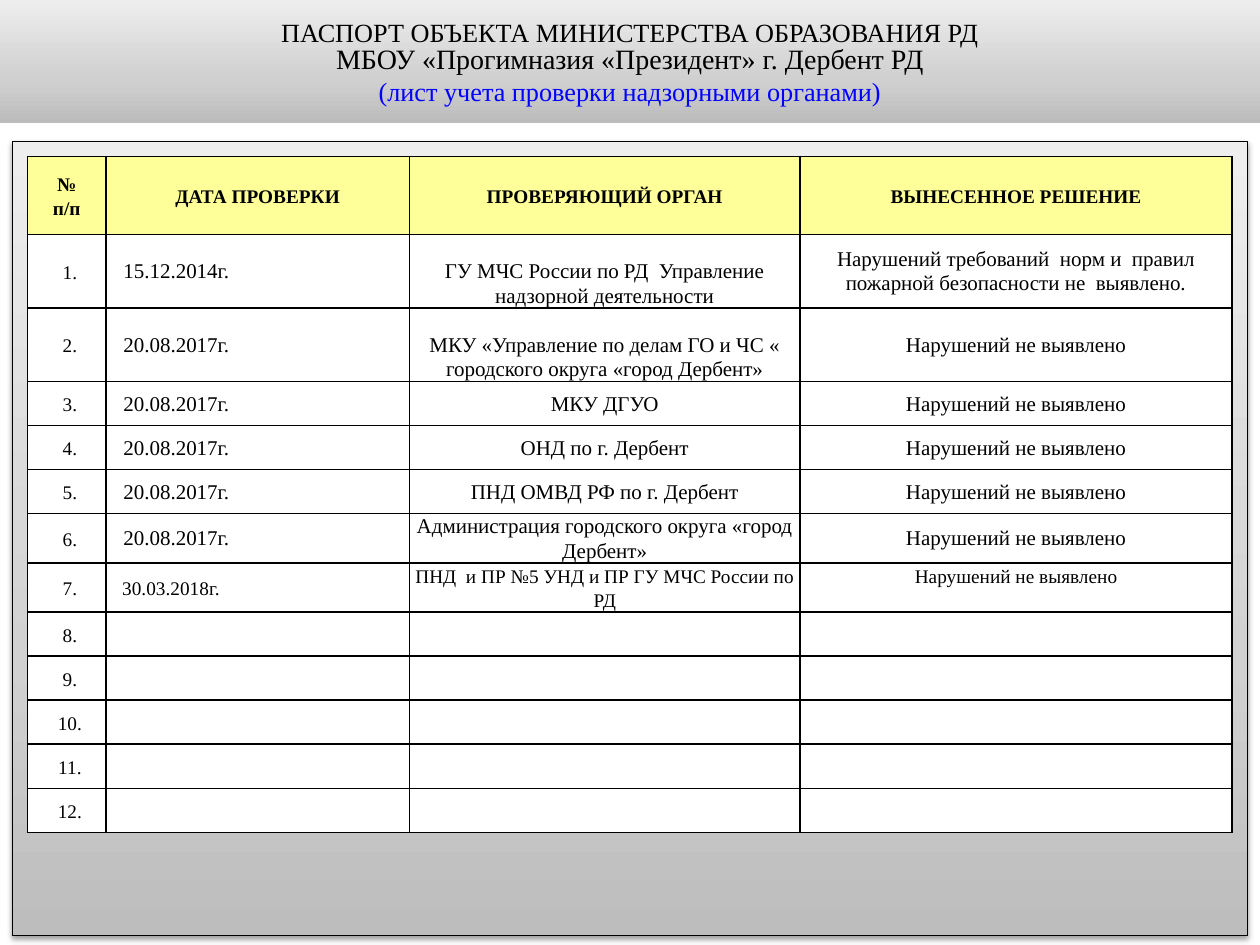
"""Build the inspection record slide: a shaded title band above a framed table."""
from copy import deepcopy
from dataclasses import dataclass

from lxml import etree
from pptx import Presentation
from pptx.dml.color import RGBColor
from pptx.enum.shapes import MSO_SHAPE
from pptx.enum.text import MSO_ANCHOR, MSO_AUTO_SIZE, PP_ALIGN
from pptx.oxml.ns import qn
from pptx.util import Inches, Pt

CENTER, LEFT = PP_ALIGN.CENTER, PP_ALIGN.LEFT
MIDDLE, TOP = MSO_ANCHOR.MIDDLE, MSO_ANCHOR.TOP
RECTANGLE = MSO_SHAPE.RECTANGLE
NO_AUTOFIT = MSO_AUTO_SIZE.NONE

WIDTH, HEIGHT = Inches(10), Inches(7.5)
FONT = "Times New Roman"
COLORS = {"text": "000000", "note": "0000FF", "header": "FFFF99", "cell": "FFFFFF", "line": "000000"}
TITLE_SHADES = ((0, "BCBCBC"), (0.35, "D0D0D0"), (1, "EDEDED"))
PANEL_SHADES = ((0, "BDBDBD"), (0.35, "D1D1D1"), (1, "EEEEEE"))
COLUMNS = (0.62, 2.41, 3.1, 3.43)
HEADER_HEIGHT, ROW_HEIGHT = 0.62, 0.35
ROW_COUNT = 12
LINE = Pt(14)
CLEAN = "Нарушений не выявлено"


@dataclass(frozen=True)
class Style:
    """How the text of a cell or a title line is set."""

    size: float = 12
    spacing: float = LINE
    align: PP_ALIGN = CENTER
    anchor: MSO_ANCHOR = MIDDLE
    indent: float = 0
    inset: float = 0.04
    top: int = 0
    bold: bool = False
    color: str = "text"


@dataclass(frozen=True)
class Inspection:
    """One filled row of the record."""

    date: str
    body: str
    decision: str = CLEAN
    height: float = ROW_HEIGHT
    top: int = 0
    size: float = 12
    inset: float = 0.04
    decision_spacing: float = LINE
    decision_anchor: MSO_ANCHOR = MIDDLE


TITLE_LINES = (
    ("ПАСПОРТ ОБЪЕКТА МИНИСТЕРСТВА ОБРАЗОВАНИЯ РД", Style(15, 1.0)),
    ("МБОУ «Прогимназия «Президент» г. Дербент РД", Style(16, 0.8)),
    ("(лист учета проверки надзорными органами)", Style(15, 1.0, color="note")),
)
HEADERS = (("№", "п/п"), ("ДАТА ПРОВЕРКИ",), ("ПРОВЕРЯЮЩИЙ ОРГАН",), ("ВЫНЕСЕННОЕ РЕШЕНИЕ",))
HEADER_STYLE = Style(11, 1.15, inset=0.03, bold=True)
NUMBER_STYLE = Style(11, 1.15, indent=0.05, inset=0.03)
INSPECTIONS = (
    Inspection("15.12.2014г.", "ГУ МЧС России по РД  Управление надзорной деятельности",
               "Нарушений требований  норм и  правил пожарной безопасности не  выявлено.",
               height=0.58, top=LINE),
    Inspection("20.08.2017г.", "МКУ «Управление по делам ГО и ЧС « городского округа «город Дербент»",
               height=0.58, top=LINE),
    Inspection("20.08.2017г.", "МКУ ДГУО"),
    Inspection("20.08.2017г.", "ОНД по г. Дербент"),
    Inspection("20.08.2017г.", "ПНД ОМВД РФ по г. Дербент"),
    Inspection("20.08.2017г.", "Администрация городского округа «город Дербент»", height=0.39),
    Inspection("30.03.2018г.", "ПНД  и ПР №5 УНД и ПР ГУ МЧС России по РД", height=0.39,
               size=11, inset=0.03, decision_spacing=1.15, decision_anchor=TOP),
)


def place(shape, left: float, top: float, width: float, height: float) -> None:
    """Put a shape at shares of the slide's size."""
    shape.left, shape.top = int(WIDTH * left), int(HEIGHT * top)
    shape.width, shape.height = int(WIDTH * width), int(HEIGHT * height)


def shade(shape, shades: tuple) -> None:
    """Fill a shape with a gradient that rises from the bottom edge."""
    shape.fill.gradient()
    shape.fill.gradient_angle = 90
    stop_list = shape._element.spPr.find(qn("a:gradFill")).find(qn("a:gsLst"))
    stop_list.append(deepcopy(stop_list[-1]))
    for stop, (position, color) in zip(shape.fill.gradient_stops, shades):
        stop.position = position
        stop.color.rgb = RGBColor.from_string(color)


def write(paragraph, text: str, style: Style) -> None:
    """Write one paragraph in a style."""
    paragraph.text = text
    paragraph.alignment = style.align
    paragraph.line_spacing = style.spacing
    paragraph.font.name = FONT
    paragraph.font.size = Pt(style.size)
    paragraph.font.bold = style.bold
    paragraph.font.color.rgb = RGBColor.from_string(COLORS[style.color])
    if style.indent:
        paragraph._p.get_or_add_pPr().set("marL", str(Inches(style.indent)))


def dress_cell(cell, color: str) -> None:
    """Give a cell its borders and its fill."""
    properties = cell._tc.get_or_add_tcPr()
    for side in ("a:lnL", "a:lnR", "a:lnT", "a:lnB"):
        border = etree.SubElement(properties, qn(side), w=str(Pt(1)))
        fill = etree.SubElement(border, qn("a:solidFill"))
        etree.SubElement(fill, qn("a:srgbClr"), val=COLORS["line"])
    cell.fill.solid()
    cell.fill.fore_color.rgb = RGBColor.from_string(COLORS[color])
    cell.margin_top = cell.margin_bottom = 0


def fill_cell(cell, lines: tuple, style: Style) -> None:
    """Write the lines of a cell."""
    cell.vertical_anchor = style.anchor
    cell.margin_left = cell.margin_right = Inches(style.inset)
    cell.margin_top = style.top
    frame = cell.text_frame
    for index, text in enumerate(lines):
        write(frame.add_paragraph() if index else frame.paragraphs[0], text, style)


def add_title(page) -> None:
    """Set the title placeholder as a shaded band."""
    title = page.shapes.title
    place(title, 0, 0, 1, 0.13)
    shade(title, TITLE_SHADES)
    frame = title.text_frame
    frame.auto_size = NO_AUTOFIT
    frame.vertical_anchor = MIDDLE
    for index, (text, style) in enumerate(TITLE_LINES):
        write(frame.add_paragraph() if index else frame.paragraphs[0], text, style)


def add_panel(page) -> None:
    """Draw the framed panel with its soft shadow."""
    panel = page.shapes.add_shape(RECTANGLE, 0, 0, 0, 0)
    place(panel, 0.01, 0.15, 0.98, 0.84)
    shade(panel, PANEL_SHADES)
    panel.line.color.rgb = RGBColor.from_string(COLORS["line"])
    panel.line.width = Pt(0.75)
    panel.shadow.inherit = False
    effects = panel._element.spPr.find(qn("a:effectLst"))
    shadow = etree.SubElement(effects, qn("a:outerShdw"), blurRad=str(Pt(3.1)),
                              dist=str(Pt(1.6)), dir="5400000", rotWithShape="0")
    color = etree.SubElement(shadow, qn("a:srgbClr"), val=COLORS["line"])
    etree.SubElement(color, qn("a:alpha"), val="38000")


def add_record(page) -> None:
    """Draw the table of inspections."""
    empty_count = ROW_COUNT - len(INSPECTIONS)
    heights = [HEADER_HEIGHT, *(entry.height for entry in INSPECTIONS), *[ROW_HEIGHT] * empty_count]
    table = page.shapes.add_table(len(heights), len(COLUMNS), Inches(0.22), Inches(1.24),
                                  Inches(sum(COLUMNS)), Inches(sum(heights))).table
    for column, width in zip(table.columns, COLUMNS):
        column.width = Inches(width)
    for index, (row, height) in enumerate(zip(table.rows, heights)):
        row.height = Inches(height)
        for cell in row.cells:
            dress_cell(cell, "cell" if index else "header")
        if index:
            fill_cell(row.cells[0], (f"{index}.",), NUMBER_STYLE)
    for column, lines in enumerate(HEADERS):
        fill_cell(table.cell(0, column), lines, HEADER_STYLE)
    for row, entry in enumerate(INSPECTIONS, start=1):
        size, inset = entry.size, entry.inset
        fill_cell(table.cell(row, 1), (entry.date,), Style(size, align=LEFT, indent=0.1, inset=inset))
        fill_cell(table.cell(row, 2), (entry.body,), Style(size, inset=inset, top=entry.top))
        fill_cell(table.cell(row, 3), (entry.decision,),
                  Style(size, entry.decision_spacing, anchor=entry.decision_anchor, inset=inset))


def main() -> None:
    """Build and save the deck."""
    deck = Presentation()
    deck.slide_width, deck.slide_height = WIDTH, HEIGHT
    page = deck.slides.add_slide(deck.slide_layouts[5])
    add_title(page)
    add_panel(page)
    add_record(page)
    deck.save("out.pptx")


if __name__ == "__main__":
    main()
